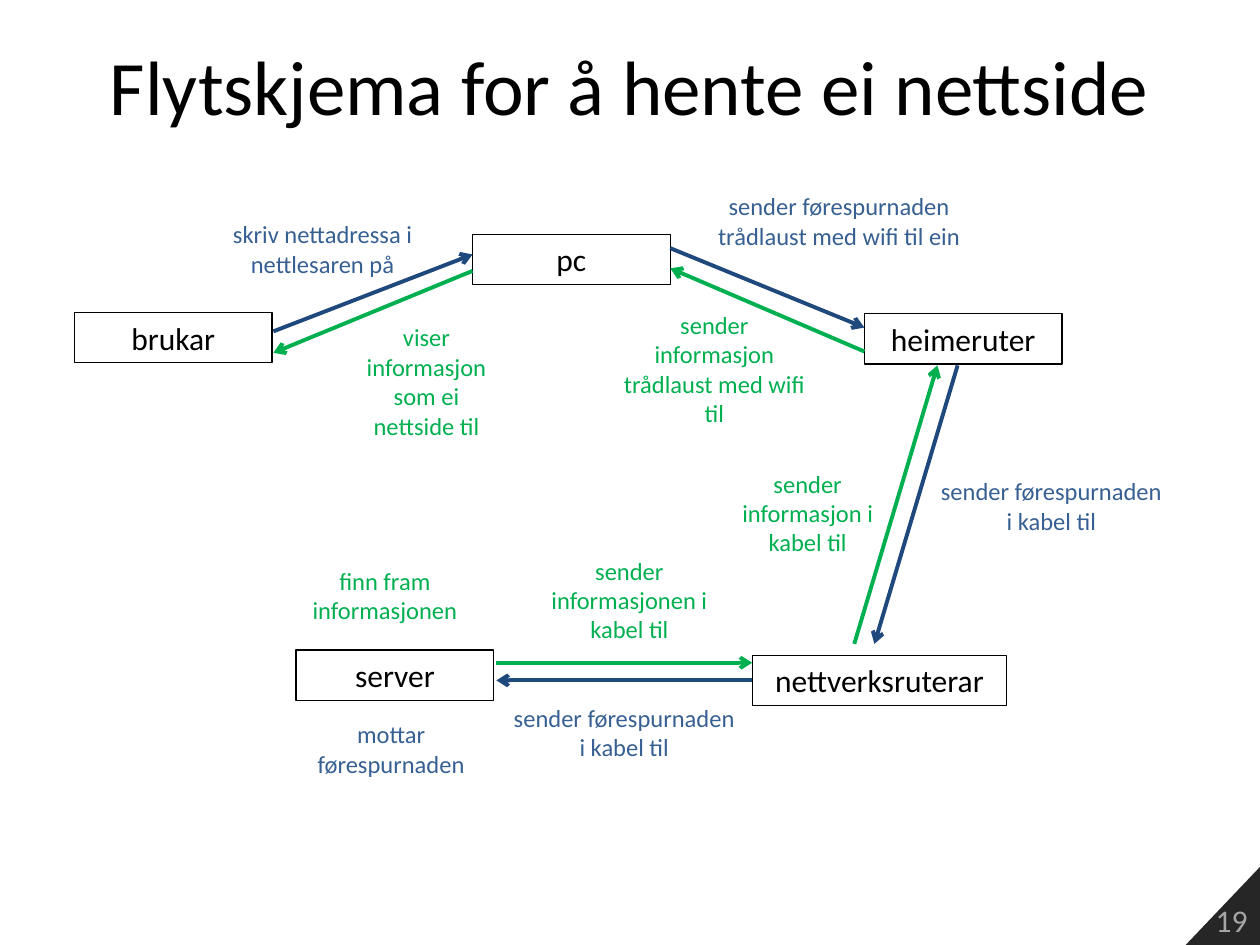
from lxml.etree import SubElement
from pptx import Presentation
from pptx.dml.color import RGBColor
from pptx.enum.shapes import MSO_CONNECTOR, MSO_SHAPE
from pptx.enum.text import MSO_ANCHOR, PP_ALIGN
from pptx.oxml.ns import qn
from pptx.util import Inches, Pt

BLACK, DARK, GRAY = "000000", "262626", "A6A6A6"
NAVY, BLUE, GREEN = "1F497D", "376092", "00B050"
NODE_H = 0.4

# name: left, top, width
NODES = {
    "brukar": (0, 1.01, 1.57),
    "pc": (3.16, 0.39, 1.57),
    "heimeruter": (6.27, 1.02, 1.57),
    "nettverksruterar": (5.38, 3.73, 2.02),
    "server": (1.76, 3.69, 1.57),
}
# start x, start y, end x, end y
REQUESTS = [
    (1.58, 1.16, 3.16, 0.55),
    (4.73, 0.5, 6.27, 1.13),
    (7.01, 1.43, 6.35, 3.64),
    (5.38, 3.93, 3.35, 3.93),
]
REPLIES = [
    (3.35, 3.79, 5.38, 3.79),
    (6.19, 3.64, 6.85, 1.43),
    (6.27, 1.32, 4.73, 0.66),
    (3.16, 0.68, 1.58, 1.33),
]
# text, left, top, width, lines
ASKING = [
    ("skriv nettadressa i nettlesaren på", 1.05, 0.22, 1.84, 2),
    ("sender førespurnaden trådlaust med wifi til ein", 4.82, 0, 2.5, 2),
    ("sender førespurnaden i kabel til", 6.77, 2.26, 1.97, 2),
    ("sender førespurnaden i kabel til", 3.35, 4.06, 2.03, 2),
    ("mottar førespurnaden", 1.81, 4.19, 1.41, 2),
]
ANSWERS = [
    ("finn fram informasjonen", 1.58, 2.97, 1.77, 2),
    ("sender informasjonen i kabel til", 3.65, 2.89, 1.51, 3),
    ("sender informasjon i\nkabel til", 5.03, 2.2, 1.58, 3),
    ("sender informasjon trådlaust med wifi til", 4.25, 0.94, 1.66, 4),
    ("viser informasjon som ei nettside til", 2.12, 1.04, 1.35, 4),
]


def color(code):
    return RGBColor.from_string(code)


def write(shape, text, size=18, ink=BLACK, align=PP_ALIGN.CENTER,
          anchor=MSO_ANCHOR.TOP):
    frame = shape.text_frame
    frame.word_wrap = True
    frame.vertical_anchor = anchor
    frame.text = text
    for para in frame.paragraphs:
        para.alignment = align
        para.font.name = "Calibri"
        para.font.size = Pt(size)
        para.font.color.rgb = color(ink)


def add_text(slide, text, left, top, width, height, **style):
    box = slide.shapes.add_textbox(
        Inches(left), Inches(top), Inches(width), Inches(height))
    write(box, text, **style)


def add_node(slide, name, left, top, width):
    node = slide.shapes.add_shape(
        MSO_SHAPE.RECTANGLE,
        Inches(left), Inches(top), Inches(width), Inches(NODE_H))
    node.shadow.inherit = False
    node.fill.background()
    node.line.color.rgb = color(BLACK)
    node.line.width = Pt(0.75)
    write(node, name)
    return node


def add_arrow(slide, x1, y1, x2, y2, ink):
    arrow = slide.shapes.add_connector(
        MSO_CONNECTOR.STRAIGHT,
        Inches(x1), Inches(y1), Inches(x2), Inches(y2))
    arrow.line.color.rgb = color(ink)
    arrow.line.width = Pt(2.25)
    SubElement(arrow.line._get_or_add_ln(), qn("a:tailEnd"), type="arrow")
    SubElement(arrow._element.spPr, qn("a:effectLst"))
    return arrow


def add_flow(slide, left, top):
    nodes = {name: add_node(slide, name, left + x, top + y, width)
             for name, (x, y, width) in NODES.items()}
    for ends, ink in ((REQUESTS, NAVY), (REPLIES, GREEN)):
        for x1, y1, x2, y2 in ends:
            arrow = add_arrow(
                slide, left + x1, top + y1, left + x2, top + y2, ink)
            if ends is REQUESTS and arrow.begin_x > arrow.end_x + Inches(1):
                arrow.begin_connect(nodes["nettverksruterar"], 1)
    for labels, ink in ((ASKING, BLUE), (ANSWERS, GREEN)):
        for text, x, y, width, lines in labels:
            add_text(slide, text, left + x, top + y, width,
                     0.1 + 0.235 * lines, size=14, ink=ink)


def add_corner(slide, left, top, width, height):
    """Dark triangle with the page number."""
    right, bottom = Inches(left + width), Inches(top + height)
    path = slide.shapes.build_freeform(Inches(left), bottom)
    path.add_line_segments([(right, Inches(top)), (right, bottom)])
    corner = path.convert_to_shape()
    corner.shadow.inherit = False
    corner.fill.solid()
    corner.fill.fore_color.rgb = color(DARK)
    corner.line.fill.background()
    write(corner, "19", ink=GRAY, align=PP_ALIGN.RIGHT,
          anchor=MSO_ANCHOR.BOTTOM)


def main():
    deck = Presentation()
    deck.slide_width, deck.slide_height = Inches(10), Inches(7.5)
    slide = deck.slides.add_slide(deck.slide_layouts[6])
    add_corner(slide, 9.41, 6.88, 0.59, 0.62)
    add_text(slide, "Flytskjema for å hente ei nettside", 0.5, 0.05, 9, 1.25,
             size=44, anchor=MSO_ANCHOR.MIDDLE)
    add_flow(slide, 0.59, 1.47)
    deck.save("out.pptx")


if __name__ == "__main__":
    main()
